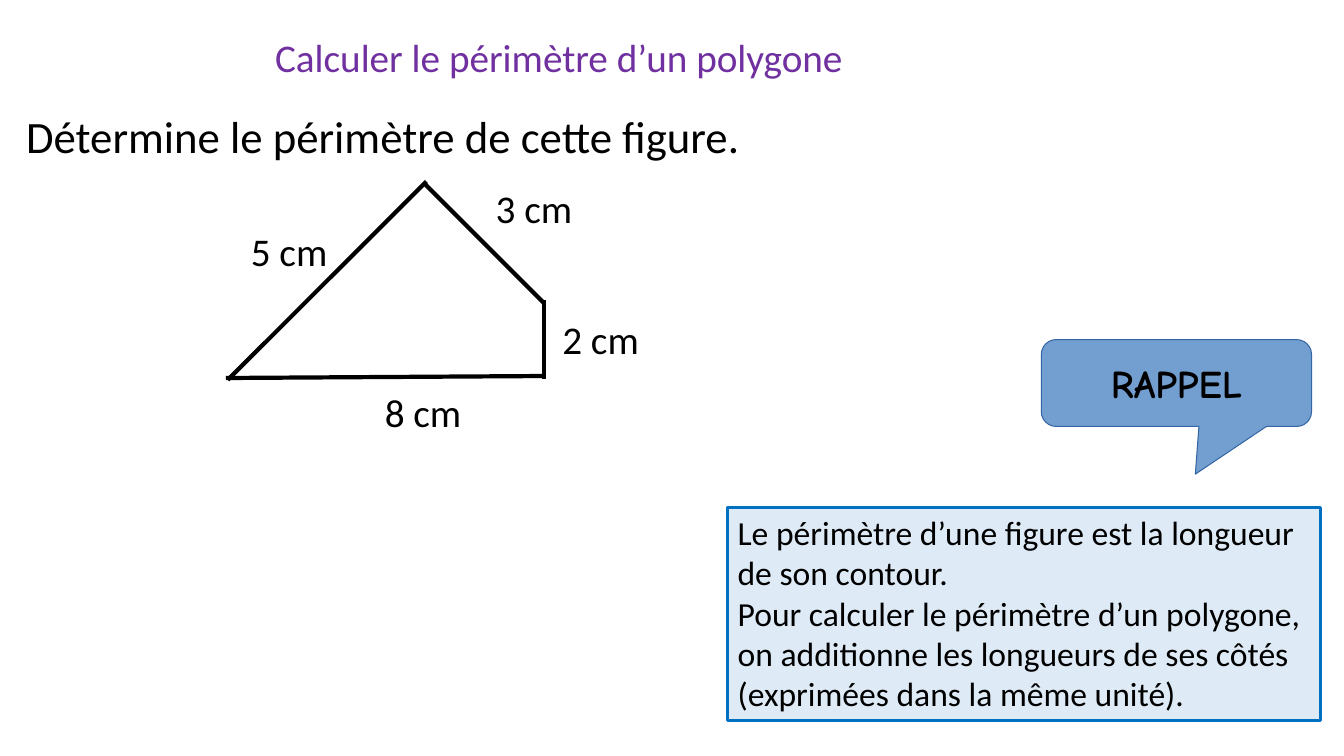
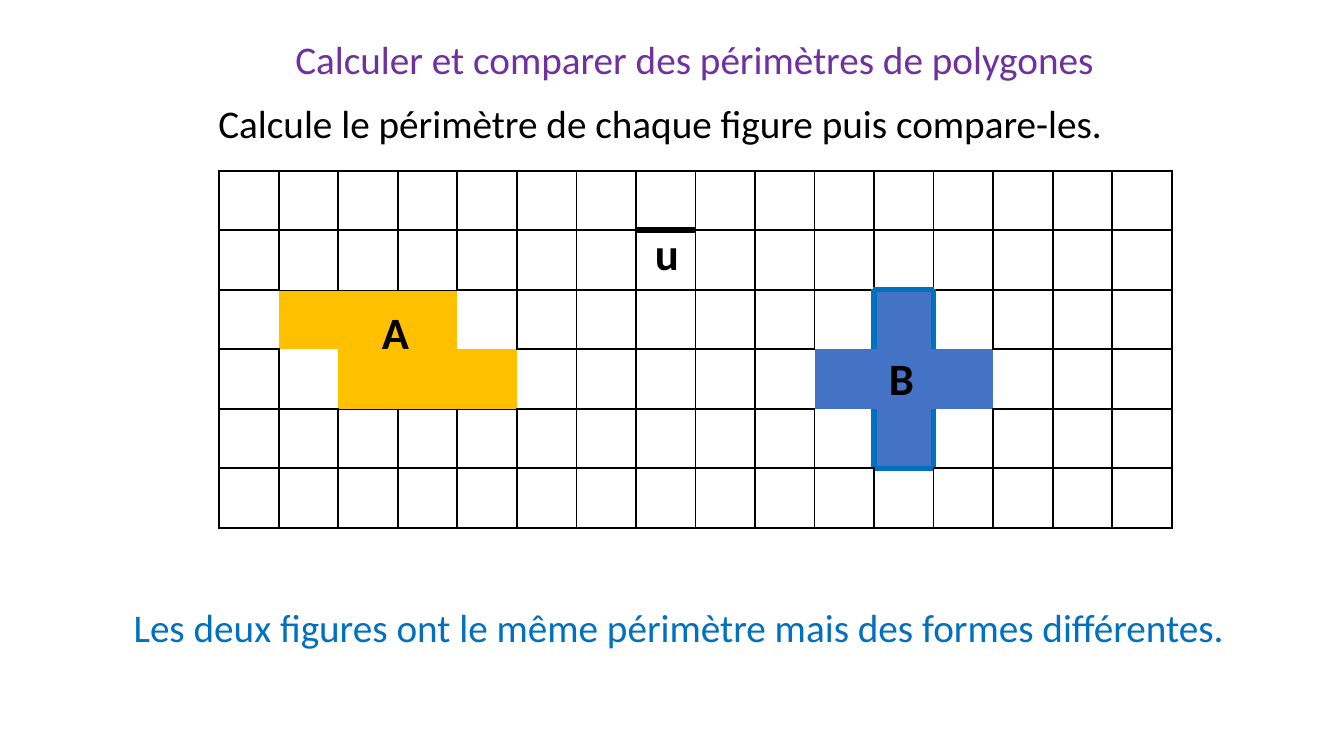
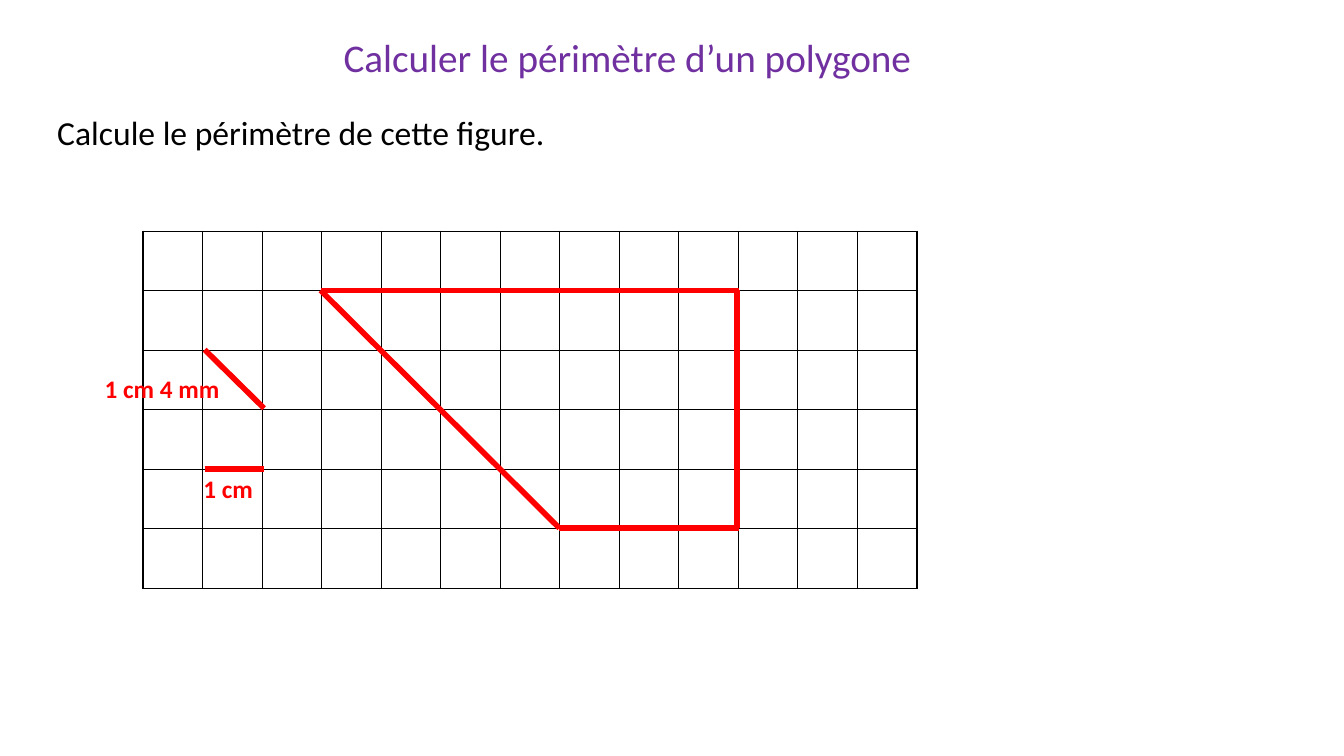
"""Build three slides of exercises on the perimeter of polygons."""
from lxml.etree import SubElement
from pptx import Presentation
from pptx.dml.color import RGBColor
from pptx.enum.shapes import MSO_CONNECTOR, MSO_SHAPE
from pptx.enum.text import MSO_ANCHOR, PP_ALIGN
from pptx.oxml.ns import qn
from pptx.util import Pt

BLACK = RGBColor(0x00, 0x00, 0x00)
PURPLE = RGBColor(0x70, 0x30, 0xA0)
BLUE = RGBColor(0x00, 0x70, 0xC0)
PALE_BLUE = RGBColor(0xDE, 0xEB, 0xF7)
CALLOUT_BLUE = RGBColor(0x72, 0x9F, 0xCF)
CALLOUT_EDGE = RGBColor(0x34, 0x65, 0xA4)
GOLD = RGBColor(0xFF, 0xC0, 0x00)
ROYAL_BLUE = RGBColor(0x44, 0x72, 0xC4)
RED = RGBColor(0xFF, 0x00, 0x00)

SQUARE = 42.52
GRID_ROWS = 6
SIDES = [("L", 0, -1, "R"), ("R", 0, 1, "L"), ("T", -1, 0, "B"), ("B", 1, 0, "T")]


def write(frame, lines, size, colour=BLACK, bold=False, align=PP_ALIGN.LEFT,
          anchor=MSO_ANCHOR.TOP, font="Calibri", wrap=True, spacing=None):
    frame.word_wrap = wrap
    frame.vertical_anchor = anchor
    for index, line in enumerate(lines):
        paragraph = frame.add_paragraph() if index else frame.paragraphs[0]
        paragraph.alignment = align
        paragraph.line_spacing = spacing
        run = paragraph.add_run()
        run.text = line
        run.font.name = font
        run.font.size = Pt(size)
        run.font.bold = bold
        run.font.color.rgb = colour


def draw_grid(slide, left, top, columns, weight, squares, edges):
    grid = slide.shapes.add_table(GRID_ROWS, columns, Pt(left), Pt(top),
                                  Pt(columns * SQUARE), Pt(GRID_ROWS * SQUARE)).table
    grid.first_row = grid.horz_banding = False
    for column in grid.columns:
        column.width = Pt(SQUARE)
    for row in grid.rows:
        row.height = Pt(SQUARE)
    for r in range(GRID_ROWS):
        for c in range(columns):
            cell = grid.cell(r, c)
            properties = cell._tc.get_or_add_tcPr()
            for side, down, across, opposite in SIDES:
                neighbour = (r + down, c + across)
                edge = edges.get((r, c, side)) or edges.get((*neighbour, opposite))
                if not edge and (r, c) not in squares and neighbour not in squares:
                    edge = (BLACK, weight)
                colour, width = edge or (None, 0)
                border = SubElement(properties, qn(f"a:ln{side}"), w=str(Pt(width)))
                if edge:
                    fill = SubElement(border, qn("a:solidFill"))
                    SubElement(fill, qn("a:srgbClr"), val=str(colour))
                else:
                    SubElement(border, qn("a:noFill"))
            if (r, c) in squares:
                cell.fill.solid()
                cell.fill.fore_color.rgb = squares[r, c]
            else:
                cell.fill.background()


presentation = Presentation()
presentation.slide_width = Pt(960)
presentation.slide_height = Pt(540)
blank = presentation.slide_layouts[6]
polygon, comparison, squared_polygon = [presentation.slides.add_slide(blank) for _ in range(3)]

titles = [
    (polygon, 189.4, 10.1, 424, "Calculer le périmètre d’un polygone"),
    (comparison, 203.8, 11.5, 591, "Calculer et comparer des périmètres de polygones"),
    (squared_polygon, 238.3, 10.1, 424, "Calculer le périmètre d’un polygone"),
]
for slide, left, top, width, title in titles:
    heading = slide.shapes.add_textbox(Pt(left), Pt(top), Pt(width), Pt(47.5))
    write(heading.text_frame, [title], 28, PURPLE, wrap=False, spacing=1.3)

question = polygon.shapes.add_textbox(Pt(11.5), Pt(34.6), Pt(530), Pt(123.8))
write(question.text_frame, ["Détermine le périmètre de cette figure."], 32,
      anchor=MSO_ANCHOR.MIDDLE, wrap=False)

reminder = polygon.shapes.add_shape(MSO_SHAPE.ROUNDED_RECTANGULAR_CALLOUT,
                                    Pt(743.8), Pt(242.6), Pt(193), Pt(62))
for index, value in enumerate([0.07, 1.05, 0.17]):
    reminder.adjustments[index] = value
write(reminder.text_frame, ["RAPPEL"], 28, bold=True, align=PP_ALIGN.CENTER,
      anchor=MSO_ANCHOR.MIDDLE, font="Comic Neue", wrap=False)

definition = polygon.shapes.add_shape(MSO_SHAPE.RECTANGLE, Pt(519.8), Pt(362.2), Pt(423.4), Pt(152.6))
write(definition.text_frame, [
    "Le périmètre d’une figure est la longueur de son contour.",
    "Pour calculer le périmètre d’un polygone, on additionne les longueurs de ses côtés "
    "(exprimées dans la même unité).",
], 24)

for panel, fill, edge, weight in [(reminder, CALLOUT_BLUE, CALLOUT_EDGE, 0.75),
                                  (definition, PALE_BLUE, BLUE, 2.25)]:
    panel.shadow.inherit = False
    panel.fill.solid()
    panel.fill.fore_color.rgb = fill
    panel.line.color.rgb = edge
    panel.line.width = Pt(weight)

figure_a = [(2, 1), (2, 2), (2, 3), (3, 2), (3, 3), (3, 4)]
figure_b = [(2, 11), (3, 10), (3, 11), (3, 12), (4, 11)]
squares = {**dict.fromkeys(figure_a, GOLD), **dict.fromkeys(figure_b, ROYAL_BLUE)}
edges = {(r, c, "T" if r == 2 else "B"): (BLACK, 0.25) for r, c in figure_a}
edges.update({(r, 11, side): (BLUE, 4.5) for r, end in [(2, "T"), (4, "B")] for side in ["L", "R", end]})
edges[0, 7, "B"] = (BLACK, 4.5)
draw_grid(comparison, 156.6, 121.9, 16, 1.5, squares, edges)
draw_grid(squared_polygon, 102.2, 165.1, 13, 1, {}, {})

polygon_sides = [
    (162.7, 271.4, 304.6, 129.6),
    (303.8, 131.8, 388.8, 216.7),
    (388.8, 214.6, 388.8, 270.7),
    (388.1, 268.6, 161.3, 270),
]
red_segments = [
    (229, 207.4, 399.6, 377.3),
    (229, 207.4, 527.8, 207.4),
    (399.6, 377.3, 527.8, 377.3),
    (526.3, 207.4, 526.3, 377.3),
    (146.2, 334.8, 188.6, 334.8),
    (146.2, 249.8, 188.6, 291.6),
]
for slide, segments, colour, weight in [(polygon, polygon_sides, BLACK, 3),
                                        (squared_polygon, red_segments, RED, 4)]:
    for segment in segments:
        stroke = slide.shapes.add_connector(MSO_CONNECTOR.STRAIGHT, *map(Pt, segment))
        stroke.line.color.rgb = colour
        stroke.line.width = Pt(weight)
        SubElement(stroke._element.spPr, qn("a:effectLst"))

labels = [
    (polygon, 172.1, 159.1, 72, "5 cm", 28, BLACK, False),
    (polygon, 347, 128.2, 72, "3 cm", 28, BLACK, False),
    (polygon, 394.6, 221.8, 72, "2 cm", 28, BLACK, False),
    (polygon, 267.8, 273.6, 72, "8 cm", 28, BLACK, False),
    (comparison, 265.7, 213.8, 46.8, "A", 32, BLACK, True),
    (comparison, 627.8, 247, 38.2, "B", 32, BLACK, True),
    (comparison, 460.8, 157.7, 38.2, "u", 32, BLACK, True),
    (squared_polygon, 33.8, 76.3, 832, "Calcule le périmètre de cette figure.", 24, BLACK, False),
    (squared_polygon, 67.7, 262.8, 113.8, "1 cm 4 mm", 18, RED, True),
    (squared_polygon, 138.2, 334.8, 57.6, "1 cm", 18, RED, True),
]
for slide, left, top, width, text, size, colour, bold in labels:
    label = slide.shapes.add_textbox(Pt(left), Pt(top), Pt(width), Pt(size * 1.2 + 7.2))
    write(label.text_frame, [text], size, colour, bold)

sentences = [
    (41, 67.7, 861, "Calcule le périmètre de chaque figure puis compare-les.", BLACK),
    (49.7, 427.7, 870, "Les deux figures ont le même périmètre mais des formes différentes.", BLUE),
]
for left, top, width, text, colour in sentences:
    sentence = comparison.shapes.add_textbox(Pt(left), Pt(top), Pt(width), Pt(41))
    write(sentence.text_frame, [text], 28, colour, align=PP_ALIGN.CENTER)

presentation.save("out.pptx")
